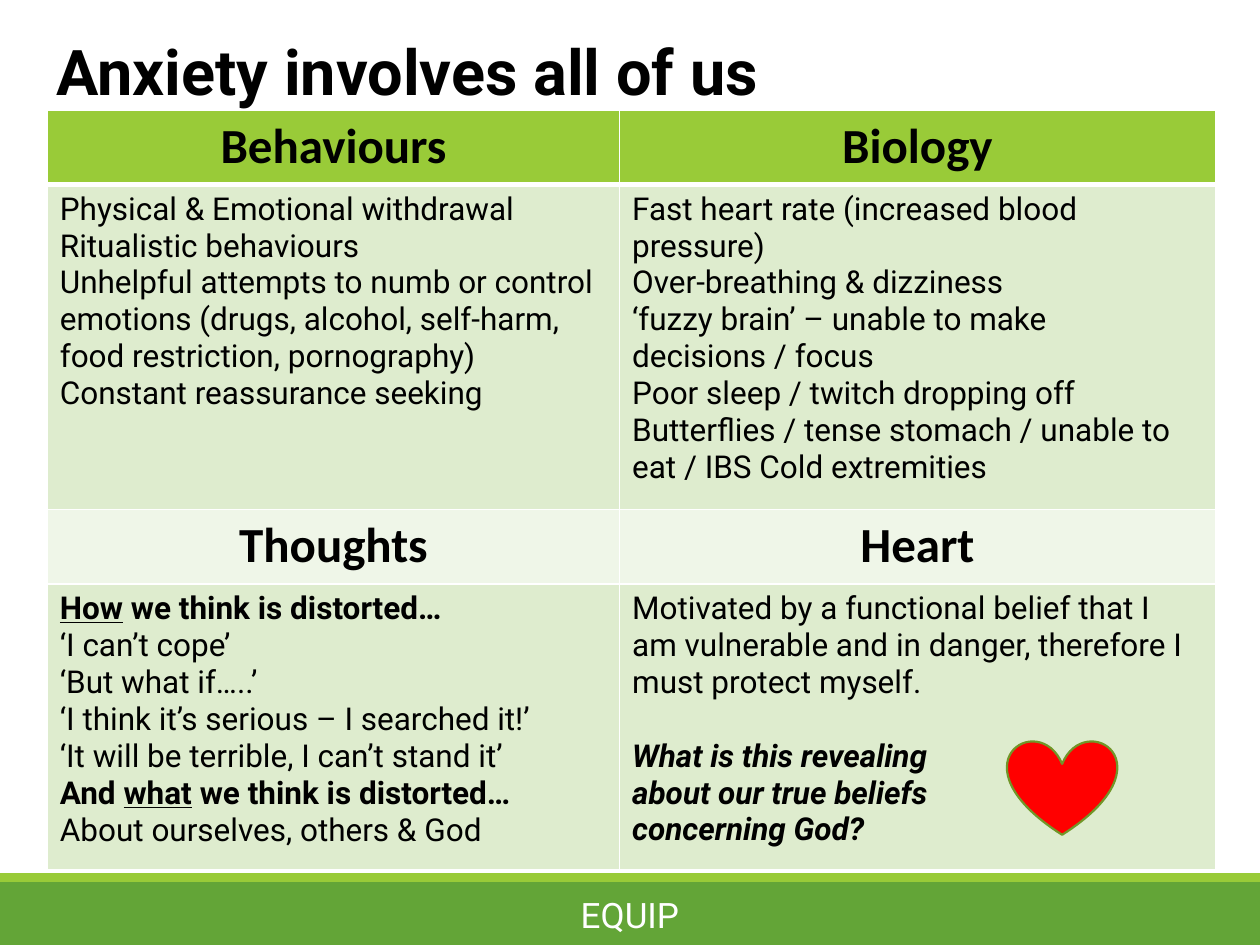
from lxml import etree
from pptx import Presentation
from pptx import util as u
from pptx.dml.color import RGBColor
from pptx.enum import shapes, text
from pptx.oxml.ns import qn

COLORS = {
    "ink": "000000", "paper": "FFFFFF", "bar": "63A537", "lime": "99CB38",
    "body": "DEECCE", "band": "EFF6E8", "heart": "FF0000", "heart_edge": "719629",
}
UNIT = u.Inches(10) // 100  # the slide is a grid of 100 columns by 75 rows
LINE_GAP = 21  # points, one line of body text

BOLD = {"bold": True}
KEY = {"bold": True, "underline": True}
QUESTION = {"bold": True, "italic": True}

# Each paragraph is a list of (words, format) runs
BEHAVIOURS = [[(line, {})] for line in (
    "Physical & Emotional withdrawal",
    "Ritualistic behaviours",
    "Unhelpful attempts to numb or control emotions (drugs, alcohol, self-harm, "
    "food restriction, pornography)",
    "Constant reassurance seeking",
)]
BIOLOGY = [[(line, {})] for line in (
    "Fast heart rate (increased blood pressure)",
    "Over-breathing & dizziness",
    "‘fuzzy brain’ – unable to make decisions / focus",
    "Poor sleep / twitch dropping off",
    "Butterflies / tense stomach / unable to eat / IBS Cold extremities",
)]
THOUGHTS = [
    [("How", KEY), (" we think is distorted…", BOLD)],
    [("‘I can’t cope’", {})],
    [("‘But what if…..’", {})],
    [("‘I think it’s serious – I searched it!’", {})],
    [("‘It will be terrible, I can’t stand it’", {})],
    [("And ", BOLD), ("what", KEY), (" we think is distorted…", BOLD)],
    [("About ourselves, others & God", {})],
]
HEART = [
    [("Motivated by a functional belief that I am vulnerable and in danger, "
      "therefore I must protect myself.", {})],
    [("What is this revealing", QUESTION)],
    [("about our true beliefs", QUESTION)],
    [("concerning God?", QUESTION)],
]
QUADRANTS = [
    [("Behaviours", BEHAVIOURS), ("Biology", BIOLOGY)],
    [("Thoughts", THOUGHTS), ("Heart", HEART)],
]


def grid(*cells):
    return [round(n * UNIT) for n in cells]


def rgb(name):
    return RGBColor.from_string(COLORS[name])


def write(paragraph, words, size=18, font="Roboto", color="ink", bold=False,
          italic=False, underline=False, align=text.PP_ALIGN.LEFT):
    paragraph.alignment = align
    run = paragraph.add_run()
    run.text = words
    face = run.font
    face.size, face.name = u.Pt(size), font
    face.bold, face.italic, face.underline = bold, italic, underline
    face.color.rgb = rgb(color)


def add_preset(slide, kind, box, fill, edge=None):
    preset = slide.shapes.add_shape(kind, *grid(*box))
    preset.shadow.inherit = False
    preset.fill.solid()
    preset.fill.fore_color.rgb = rgb(fill)
    if edge:
        preset.line.color.rgb = rgb(edge)
        preset.line.width = u.Pt(1.25)
    else:
        preset.line.fill.background()


def set_borders(cell, top=1, bottom=1):
    props = cell._tc.get_or_add_tcPr()
    sides = {"lnL": 1, "lnR": 1, "lnT": top, "lnB": bottom}
    for position, (side, points) in enumerate(sides.items()):
        line = etree.Element(qn(f"a:{side}"), w=str(u.Pt(points)))
        solid = etree.SubElement(line, qn("a:solidFill"))
        etree.SubElement(solid, qn("a:srgbClr"), val=COLORS["paper"])
        props.insert(position, line)


def fill_cell(cell, color):
    cell.fill.solid()
    cell.fill.fore_color.rgb = rgb(color)


def add_title(slide, box):
    title = slide.shapes.title
    title.left, title.top, title.width, title.height = grid(*box)
    frame = title.text_frame
    frame.vertical_anchor = text.MSO_ANCHOR.TOP
    frame.auto_size = text.MSO_AUTO_SIZE.NONE
    write(frame.paragraphs[0], "Anxiety involves all of us", size=36, bold=True)


def add_quadrants(slide, box):
    left, top, width, height = box
    table = slide.shapes.add_table(4, 2, *grid(*box)).table
    table.first_row = table.horz_banding = False
    for column, share in zip(table.columns, (0.49, 0.51)):
        column.width = round(share * width * UNIT)
    for row, rows_high in zip(table.rows, (5.9, 25.8, 5.9, 22.7)):
        row.height = round(rows_high * UNIT)

    for half, pair in enumerate(QUADRANTS):
        for side, (heading, paragraphs) in enumerate(pair):
            head, body = table.cell(2 * half, side), table.cell(2 * half + 1, side)
            fill_cell(head, "band" if half else "lime")
            fill_cell(body, "body")
            rule = 1 if half else 3
            set_borders(head, bottom=rule)
            set_borders(body, top=rule)
            write(head.text_frame.paragraphs[0], heading, size=28, font="Calibri",
                  bold=True, align=text.PP_ALIGN.CENTER)
            frame = body.text_frame
            for index, runs in enumerate(paragraphs):
                paragraph = frame.add_paragraph() if index else frame.paragraphs[0]
                for words, look in runs:
                    write(paragraph, words, **look)
            if paragraphs is HEART:  # sets the question apart from the belief
                frame.paragraphs[1].space_before = u.Pt(LINE_GAP)

    # Heart in the lower right corner of the last quadrant
    add_preset(slide, shapes.MSO_SHAPE.HEART,
               (left + width - 16.5, top + height - 10.3, 8.7, 7.5),
               "heart", "heart_edge")


def add_footer(slide, box):
    left, top, width, height = box
    strip = 0.7
    add_preset(slide, shapes.MSO_SHAPE.RECTANGLE,
               (left, top + strip, width, height - strip), "bar")
    add_preset(slide, shapes.MSO_SHAPE.RECTANGLE, (left, top, width, strip), "lime")
    label_width = 39.6
    label = slide.shapes.add_textbox(
        *grid(left + (width - label_width) / 2, top + 1.3, label_width, 4))
    frame = label.text_frame
    frame.word_wrap = True
    frame.vertical_anchor = text.MSO_ANCHOR.MIDDLE
    write(frame.paragraphs[0], "EQUIP", size=20, color="paper",
          align=text.PP_ALIGN.CENTER)


def main():
    deck = Presentation()
    deck.slide_width, deck.slide_height = grid(100, 75)
    slide = deck.slides.add_slide(deck.slide_layouts[5])  # title only
    add_footer(slide, (0, 69.3, 100, 5.7))
    add_quadrants(slide, (3.75, 8.75, 92.7, 60.3))
    add_title(slide, (3.5, 2.1, 92.1, 7.1))
    deck.save("out.pptx")


if __name__ == "__main__":
    main()
